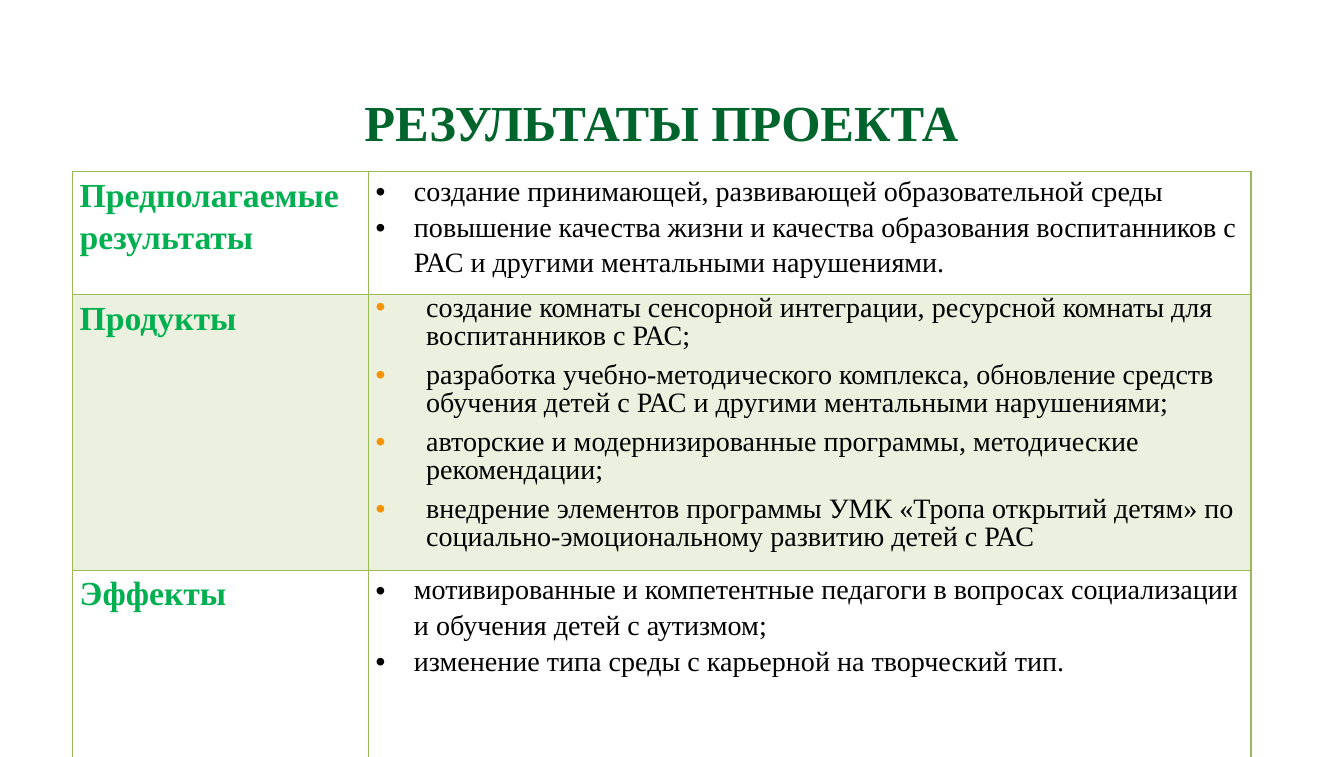
from lxml import etree
from pptx import Presentation
from pptx.dml.color import RGBColor
from pptx.enum.text import MSO_ANCHOR, PP_ALIGN
from pptx.oxml.ns import qn
from pptx.util import Inches, Pt

CENTER = PP_ALIGN.CENTER
MIDDLE = MSO_ANCHOR.MIDDLE

FONT = "Times New Roman"
DARK_GREEN = RGBColor(0x00, 0x64, 0x2D)
GREEN = RGBColor(0x00, 0xB0, 0x50)
BORDER = RGBColor(0x9B, 0xBB, 0x59)
PALE_GREEN = RGBColor(0xEB, 0xF1, 0xDE)
ORANGE = RGBColor(0xF6, 0x92, 0x00)
BLACK = RGBColor(0, 0, 0)

TITLE = "РЕЗУЛЬТАТЫ ПРОЕКТА"
PLAIN = {"fill": None, "bullet": BLACK, "indent": 0.38, "spacing": 1.15, "before": 0}
SHADED = {"fill": PALE_GREEN, "bullet": ORANGE, "indent": 0.5, "spacing": 0.9, "before": 8}
ROWS = [
    ("Предполагаемые результаты", 1.22, PLAIN, [
        "создание принимающей, развивающей образовательной среды",
        "повышение качества жизни и качества образования воспитанников с РАС "
        "и другими ментальными нарушениями.",
    ]),
    ("Продукты", 2.73, SHADED, [
        "создание комнаты сенсорной интеграции, ресурсной комнаты для "
        "воспитанников с РАС;",
        "разработка учебно-методического комплекса, обновление средств обучения "
        "детей с РАС и другими ментальными нарушениями;",
        "авторские и модернизированные программы, методические рекомендации;",
        "внедрение элементов программы УМК «Тропа открытий детям» по "
        "социально-эмоциональному развитию детей с РАС",
    ]),
    ("Эффекты", 2.22, PLAIN, [
        "мотивированные и компетентные педагоги в вопросах социализации и "
        "обучения детей с аутизмом;",
        "изменение типа среды с карьерной на творческий тип.",
    ]),
]
COL_WIDTHS = [2.93, 8.74]


def format_text(p, size, color, bold, spacing):
    p.line_spacing = spacing
    for r in p.runs:
        r.font.name = FONT
        r.font.size = Pt(size)
        r.font.bold = bold
        r.font.color.rgb = color


def add_bullet(p, color, indent):
    pPr = p._p.get_or_add_pPr()
    pPr.set("marL", str(Inches(indent)))
    pPr.set("indent", str(-Inches(indent)))
    clr = etree.SubElement(pPr, qn("a:buClr"))
    etree.SubElement(clr, qn("a:srgbClr"), val=str(color))
    etree.SubElement(pPr, qn("a:buFont"), typeface="Arial")
    etree.SubElement(pPr, qn("a:buChar"), char="•")


def format_cell(cell, fill):
    cell.margin_left = cell.margin_right = Inches(0.07)
    cell.margin_top = cell.margin_bottom = 0
    tcPr = cell._tc.get_or_add_tcPr()
    for side in ("L", "R", "T", "B"):
        ln = etree.SubElement(tcPr, qn(f"a:ln{side}"), w=str(Pt(1)))
        solid = etree.SubElement(ln, qn("a:solidFill"))
        etree.SubElement(solid, qn("a:srgbClr"), val=str(BORDER))
    if fill is None:
        cell.fill.background()
    else:
        cell.fill.solid()
        cell.fill.fore_color.rgb = fill


def add_title(slide):
    title = slide.shapes.title
    title.left, title.top = Inches(0.42), Inches(0.97)
    title.width, title.height = Inches(12.26), Inches(0.55)
    tf = title.text_frame
    tf.margin_left = tf.margin_right = tf.margin_top = tf.margin_bottom = 0
    tf.vertical_anchor = MIDDLE
    tf.text = TITLE
    p = tf.paragraphs[0]
    p.alignment = CENTER
    format_text(p, 36, DARK_GREEN, True, 0.9)


def add_results(slide):
    height = sum(row[1] for row in ROWS)
    table = slide.shapes.add_table(
        len(ROWS), len(COL_WIDTHS), Inches(0.72), Inches(1.7),
        Inches(sum(COL_WIDTHS)), Inches(height)).table
    table.first_row = table.horz_banding = False
    for column, width in zip(table.columns, COL_WIDTHS):
        column.width = Inches(width)
    for row, (heading, row_height, style, items) in zip(table.rows, ROWS):
        row.height = Inches(row_height)
        label, body = row.cells
        for cell in (label, body):
            format_cell(cell, style["fill"])
        label.text_frame.text = heading
        format_text(label.text_frame.paragraphs[0], 24, GREEN, True, 1.15)
        tf = body.text_frame
        tf.text = "\n".join(items)
        for i, p in enumerate(tf.paragraphs):
            add_bullet(p, style["bullet"], style["indent"])
            if i:
                p.space_before = Pt(style["before"])
            format_text(p, 20, BLACK, False, style["spacing"])


def main():
    prs = Presentation()
    prs.slide_width, prs.slide_height = Inches(13.31), Inches(7.5)
    slide = prs.slides.add_slide(prs.slide_layouts[5])
    add_title(slide)
    add_results(slide)
    prs.save("out.pptx")


if __name__ == "__main__":
    main()
